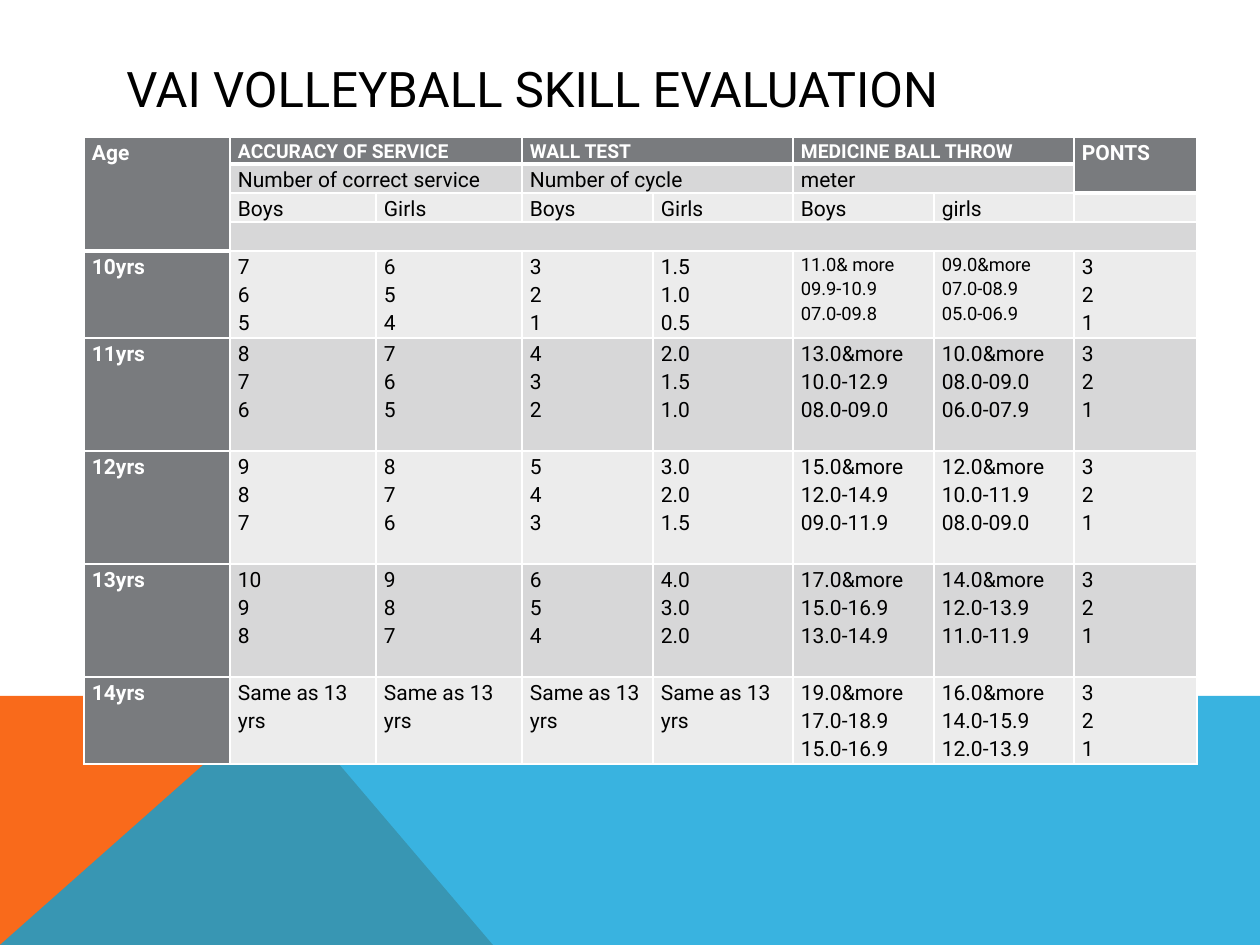
"""Build the volleyball skill evaluation slide."""
from dataclasses import dataclass

from lxml import etree
from pptx import Presentation
from pptx import util as u
from pptx.dml.color import RGBColor
from pptx.enum import text
from pptx.oxml.ns import qn

PX = 914400 / 126
FONT = "Roboto"
WHITE, BLACK = "FFFFFF", "000000"
GREY, BAND, PALE = "797B7E", "D7D7D8", "ECECEC"
COLUMN_WIDTHS = [146, 146, 146, 131, 140, 141, 140, 123]
ROW_HEIGHTS = [27, 28, 28, 28, 85, 113, 113, 113, 86]
HEADER_BORDERS = {"lnL": 1, "lnR": 1, "lnT": 1, "lnB": 3}


@dataclass
class Backdrop:
    points: list[tuple[int, int]]
    color: str
    opacity: int = 100


@dataclass
class Heading:
    row: int
    column: int
    label: str
    rows: int = 1
    columns: int = 1
    size: float = 12


@dataclass
class AgeGroup:
    age: str
    scores: list[str]
    throw_size: float = 12


BACKDROPS = [
    Backdrop([(0, 945), (0, 696), (281, 696), (493, 945)], "F96A1B"),
    Backdrop([(0, 945), (281, 696), (1260, 696), (1260, 945)], "08A1D9", 80),
]
HEADINGS = [
    Heading(0, 0, "Age", rows=4),
    Heading(0, 1, "ACCURACY OF SERVICE", columns=2, size=11),
    Heading(0, 3, "WALL TEST", columns=2, size=11),
    Heading(0, 5, "MEDICINE BALL THROW", columns=2, size=11),
    Heading(0, 7, "PONTS", rows=2),
    Heading(1, 1, "Number of correct service", columns=2),
    Heading(1, 3, "Number of cycle", columns=2),
    Heading(1, 5, "meter", columns=2),
    *(Heading(2, column, label) for column, label in
      enumerate(["Boys", "Girls", "Boys", "Girls", "Boys", "girls"], 1)),
    Heading(3, 1, "", columns=7),
]
POINTS = "3\n2\n1"
AGE_GROUPS = [
    AgeGroup("10yrs", ["7\n6\n5", "6\n5\n4", "3\n2\n1", "1.5\n1.0\n0.5",
                       "11.0& more\n09.9-10.9\n07.0-09.8",
                       "09.0&more\n07.0-08.9\n05.0-06.9"], throw_size=10.5),
    AgeGroup("11yrs", ["8\n7\n6", "7\n6\n5", "4\n3\n2", "2.0\n1.5\n1.0",
                       "13.0&more\n10.0-12.9\n08.0-09.0",
                       "10.0&more\n08.0-09.0\n06.0-07.9"]),
    AgeGroup("12yrs", ["9\n8\n7", "8\n7\n6", "5\n4\n3", "3.0\n2.0\n1.5",
                       "15.0&more\n12.0-14.9\n09.0-11.9",
                       "12.0&more\n10.0-11.9\n08.0-09.0"]),
    AgeGroup("13yrs", ["10\n9\n8", "9\n8\n7", "6\n5\n4", "4.0\n3.0\n2.0",
                       "17.0&more\n15.0-16.9\n13.0-14.9",
                       "14.0&more\n12.0-13.9\n11.0-11.9"]),
    AgeGroup("14yrs", ["Same as 13 yrs"] * 4 + ["19.0&more\n17.0-18.9\n15.0-16.9",
                                                "16.0&more\n14.0-15.9\n12.0-13.9"]),
]


def px(length: int) -> int:
    return round(length * PX)


def rgb(color: str) -> RGBColor:
    return RGBColor.from_string(color)


def write(frame, content: str, *, size: float = 12, color: str = BLACK,
          bold: bool = False, spacing: float = 1.15) -> None:
    frame.word_wrap = True
    for index, line in enumerate(content.split("\n")):
        paragraph = frame.add_paragraph() if index else frame.paragraphs[0]
        paragraph.line_spacing = spacing
        if not line:
            etree.SubElement(paragraph._p, qn("a:endParaRPr"), sz=str(int(size * 100)))
            continue
        run = paragraph.add_run()
        run.text = line
        run.font.name, run.font.size, run.font.bold = FONT, u.Pt(size), bold
        run.font.color.rgb = rgb(color)


def draw_backdrop(slide, backdrop: Backdrop) -> None:
    start, *others = backdrop.points
    builder = slide.shapes.build_freeform(*start, scale=PX)
    builder.add_line_segments(others, close=True)
    shape = builder.convert_to_shape()
    shape.shadow.inherit = False
    shape.line.fill.background()
    shape.fill.solid()
    shape.fill.fore_color.rgb = rgb(backdrop.color)
    if backdrop.opacity < 100:
        tint = shape.fill._xPr.find(f".//{qn('a:srgbClr')}")
        etree.SubElement(tint, qn("a:alpha"), val=str(backdrop.opacity * 1000))


def add_border(cell, side: str, points: int) -> None:
    line = etree.SubElement(cell._tc.get_or_add_tcPr(), qn(f"a:{side}"),
                            w=str(u.Pt(points)))
    fill = etree.SubElement(line, qn("a:solidFill"))
    etree.SubElement(fill, qn("a:srgbClr"), val=WHITE)


def style_cell(cell, row: int, column: int) -> None:
    cell.margin_left = cell.margin_right = px(8)
    cell.margin_top = cell.margin_bottom = 0
    if row == 0:
        for side, points in HEADER_BORDERS.items():
            add_border(cell, side, points)
    cell.fill.solid()
    header = row == 0 or column == 0
    cell.fill.fore_color.rgb = rgb(GREY if header else BAND if row % 2 else PALE)


def draw_scores(slide) -> None:
    table = slide.shapes.add_table(
        len(ROW_HEIGHTS), len(COLUMN_WIDTHS), px(84), px(137),
        px(sum(COLUMN_WIDTHS)), px(sum(ROW_HEIGHTS))).table
    for column, width in zip(table.columns, COLUMN_WIDTHS):
        column.width = px(width)
    for row, height in zip(table.rows, ROW_HEIGHTS):
        row.height = px(height)

    entries = {}
    for heading in HEADINGS:
        strong = heading.row == 0
        entries[heading.row, heading.column] = (heading.label, dict(
            size=heading.size, color=WHITE if strong else BLACK, bold=strong))
        if heading.rows * heading.columns > 1:
            table.cell(heading.row, heading.column).merge(table.cell(
                heading.row + heading.rows - 1, heading.column + heading.columns - 1))
    for row, group in enumerate(AGE_GROUPS, 4):
        entries[row, 0] = (group.age, dict(color=WHITE, bold=True))
        for column, score in enumerate([*group.scores, POINTS], 1):
            size = group.throw_size if column in (5, 6) else 12
            entries[row, column] = (score, dict(size=size))

    for row in range(len(ROW_HEIGHTS)):
        for column in range(len(COLUMN_WIDTHS)):
            cell = table.cell(row, column)
            style_cell(cell, row, column)
            content, style = entries.get((row, column), ("", {}))
            write(cell.text_frame, content, **style)
    for paragraph in table.cell(4, 5).text_frame.paragraphs:
        paragraph.alignment = text.PP_ALIGN.JUSTIFY


def main() -> None:
    deck = Presentation()
    deck.slide_width, deck.slide_height = px(1260), px(945)
    slide = deck.slides.add_slide(deck.slide_layouts[6])
    for backdrop in BACKDROPS:
        draw_backdrop(slide, backdrop)
    title = slide.shapes.add_textbox(px(114), px(50), px(1035), px(76)).text_frame
    title.vertical_anchor = text.MSO_ANCHOR.MIDDLE
    write(title, "VAI VOLLEYBALL SKILL EVALUATION", size=28, spacing=1.0)
    draw_scores(slide)
    deck.save("out.pptx")


if __name__ == "__main__":
    main()
